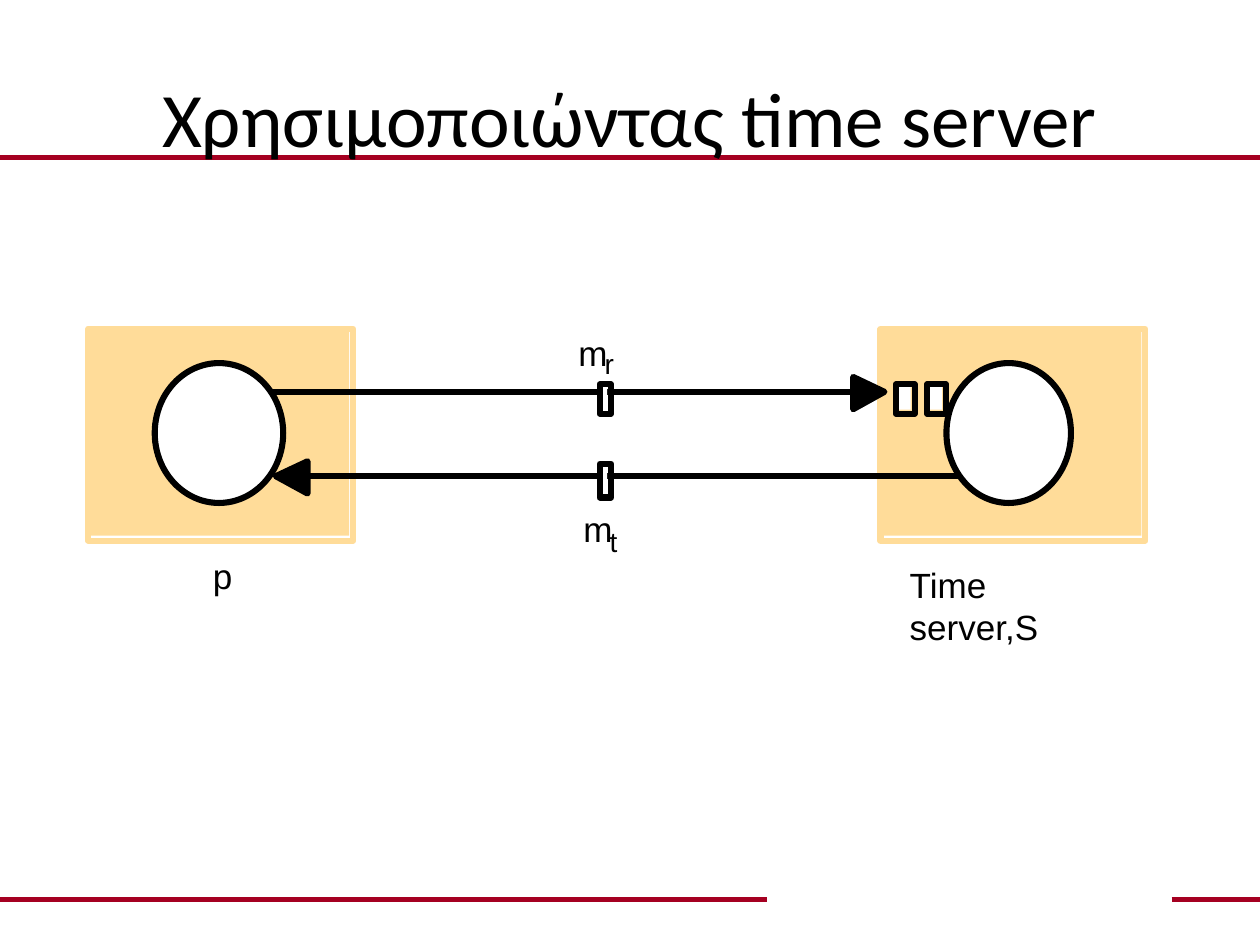
from lxml.etree import SubElement
from pptx import Presentation
from pptx.dml.color import RGBColor
from pptx.enum.shapes import MSO_CONNECTOR as Connector, MSO_SHAPE as Shape
from pptx.enum.text import MSO_ANCHOR as Anchor, PP_ALIGN as Align
from pptx.oxml.ns import qn
from pptx.util import Cm, Pt

COLORS = {"rule": "A50021", "host": "FFDC99", "ink": "000000", "paper": "FFFFFF"}
STROKE = 3.5

prs = Presentation()
prs.slide_width, prs.slide_height = Cm(25.4), Cm(19.05)
slide = prs.slides.add_slide(prs.slide_layouts[6])
shapes = slide.shapes


def paint(part, fill=None, line=None):
    part.shadow.inherit = False
    if fill:
        part.fill.solid()
        part.fill.fore_color.rgb = RGBColor.from_string(COLORS[fill])
    else:
        part.fill.background()
    if line:
        part.line.color.rgb = RGBColor.from_string(COLORS[line])
        part.line.width = Pt(STROKE)
    else:
        part.line.fill.background()


def draw_line(x1, x2, y, color, width):
    line = shapes.add_connector(Connector.STRAIGHT, Cm(x1), Cm(y), Cm(x2), Cm(y))
    line.line.color.rgb = RGBColor.from_string(COLORS[color])
    line.line.width = Pt(width)
    SubElement(line._element.spPr, qn("a:effectLst"))


for start, end, y in [(23.62, 25.4, 18.14), (0, 15.47, 18.14), (0, 25.4, 3.17)]:
    draw_line(start, end, y, "rule", 3)

title = shapes.add_textbox(Cm(1.27), Cm(0.76), Cm(22.86), Cm(3.18)).text_frame
title.word_wrap = True
title.vertical_anchor = Anchor.MIDDLE
title.paragraphs[0].alignment = Align.CENTER
heading = title.paragraphs[0].add_run()
heading.text = "Χρησιμοποιώντας time server"
heading.font.name = "Calibri"
heading.font.size = Pt(44)
heading.font.color.rgb = RGBColor.from_string(COLORS["ink"])

hosts = [(x, 6.63, 5.26, 4.17, "host", "host") for x in (1.78, 17.75)]
messages = [
    (18.06, 7.75, 0.3, 0.51, "paper", "ink"),
    (18.69, 7.75, 0.3, 0.51, "paper", "ink"),
    (12.09, 7.75, 0.15, 0.51, "paper", "ink"),
    (12.09, 9.35, 0.15, 0.6, "paper", "ink"),
]
processes = [(3.12, 2.59), (19.08, 2.51)]
arrows = [(5.49, 17.2, 17.83, 7.9), (19.63, 6.2, 5.56, 9.6)]

for x, y, width, height, fill, border in hosts:
    paint(shapes.add_shape(Shape.RECTANGLE, Cm(x), Cm(y), Cm(width), Cm(height)), fill=fill)
    outline = shapes.add_shape(Shape.RECTANGLE, Cm(x), Cm(y), Cm(width + 0.08), Cm(height + 0.1))
    paint(outline, line=border)

for start, base, tip, y in arrows:
    draw_line(start, base, y, "ink", STROKE)
    head = shapes.build_freeform(Cm(tip), Cm(y))
    head.add_line_segments([(Cm(base), Cm(y + 0.35)), (Cm(base), Cm(y - 0.3))], close=True)
    paint(head.convert_to_shape(), "ink", "ink")

for x, y, width, height, fill, border in messages:
    paint(shapes.add_shape(Shape.RECTANGLE, Cm(x), Cm(y), Cm(width), Cm(height)), fill=fill)
    outline = shapes.add_shape(Shape.RECTANGLE, Cm(x), Cm(y), Cm(width + 0.08), Cm(height + 0.08))
    paint(outline, line=border)

for x, width in processes:
    paint(shapes.add_shape(Shape.OVAL, Cm(x), Cm(7.32), Cm(width), Cm(2.82)), "paper", "ink")

labels = [
    ("m", 11.66, 6.68, 0.79, 0.69, 20),
    ("r", 12.19, 6.99, 0.33, 0.56, 16),
    ("m", 11.76, 10.24, 0.79, 0.69, 20),
    ("t", 12.29, 10.57, 0.33, 0.56, 16),
    ("p", 4.29, 11.18, 0.64, 0.69, 20),
    ("Time server,S", 18.34, 11.35, 4.04, 0.84, 20),
]
for text, x, y, width, height, size in labels:
    label = shapes.add_textbox(Cm(x), Cm(y), Cm(width), Cm(height)).text_frame
    label.margin_left = label.margin_right = label.margin_top = label.margin_bottom = 0
    label.word_wrap = True
    run = label.paragraphs[0].add_run()
    run.text = text
    run.font.name = "Arial"
    run.font.size = Pt(size)
    run.font.color.rgb = RGBColor.from_string(COLORS["ink"])

prs.save("out.pptx")
